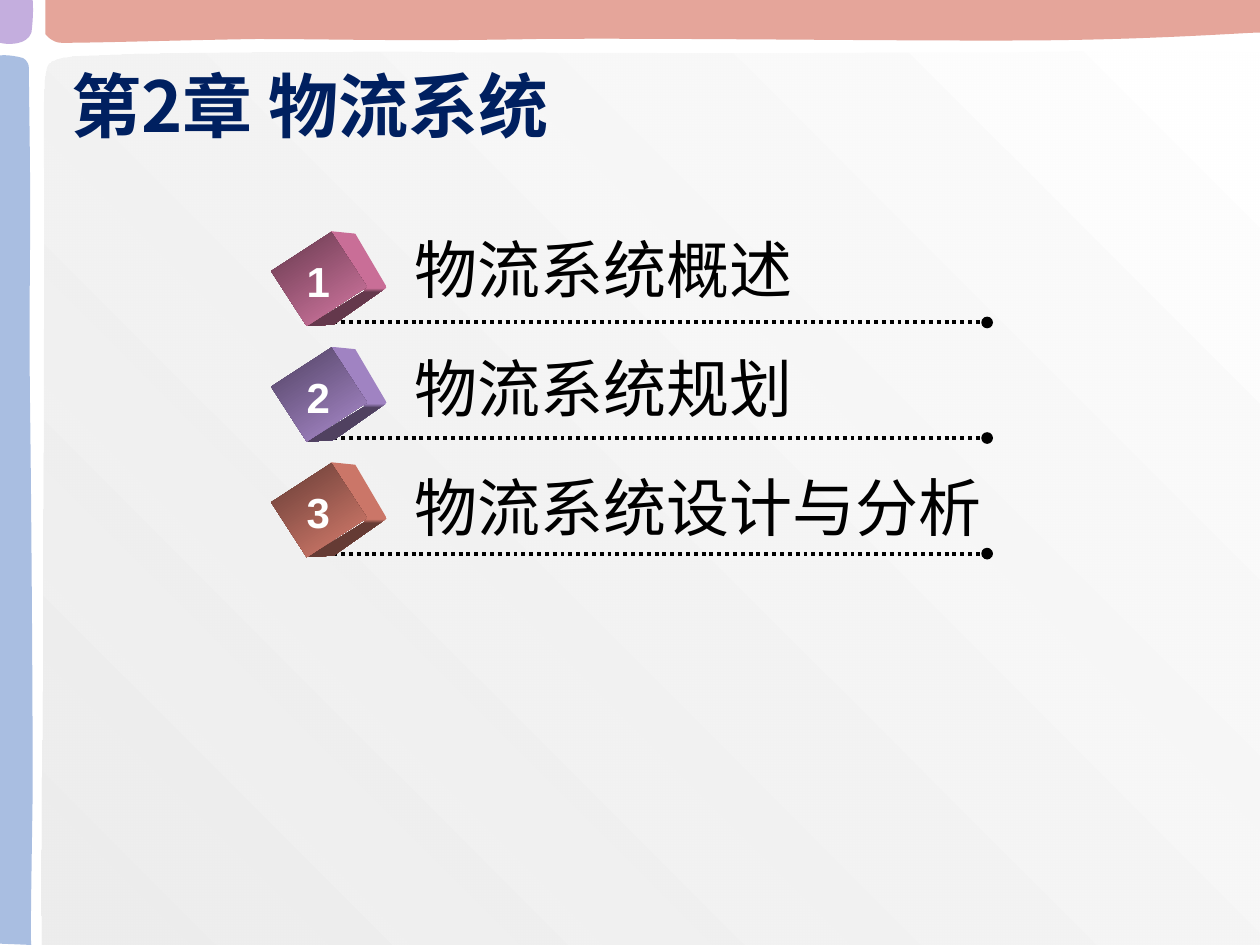
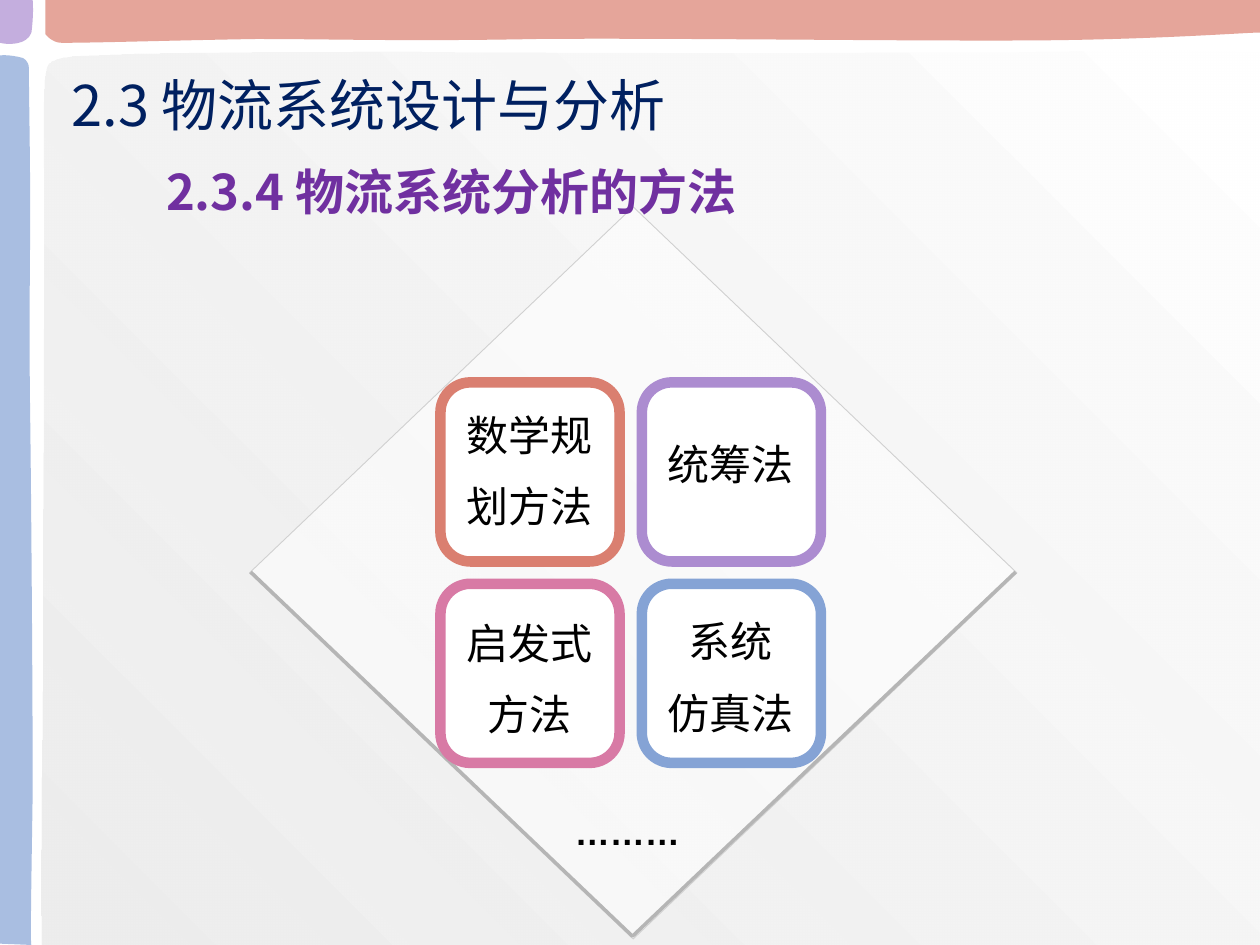
from lxml.etree import SubElement
from pptx import Presentation
from pptx.dml.color import RGBColor
from pptx.enum.dml import MSO_LINE
from pptx.enum.shapes import MSO_CONNECTOR, MSO_SHAPE
from pptx.enum.text import MSO_ANCHOR, MSO_AUTO_SIZE, PP_ALIGN
from pptx.oxml.ns import qn
from pptx.util import Cm, Pt

CORAL, PINK, PURPLE, BLUE = "DA7F70", "D87AA5", "AC8CD0", "85A3D5"
NAVY, VIOLET, BLACK, WHITE = "002060", "7030A0", "000000", "FFFFFF"
TITLE_FONT, BODY_FONT, LATIN_FONT = "Noto Sans CJK JP", "Noto Sans CJK SC", "Arial"


def paint(fill, *colors, alpha=100, angle=0):
    """Fill with one colour, or with a gradient of two; alpha applies to the first."""
    if len(colors) == 1:
        fill.solid()
        targets = [fill.fore_color]
    else:
        fill.gradient()
        fill.gradient_angle = angle
        targets = [stop.color for stop in fill.gradient_stops]
    for target, color in zip(targets, colors):
        target.rgb = RGBColor.from_string(color)
    if alpha < 100:
        first = next(fill._xPr.iter(qn("a:srgbClr")))
        SubElement(first, qn("a:alpha")).set("val", str(alpha * 1000))


def outline(page, points, down=0, close=True):
    """Draw points given in 1/100 inch; six numbers make a Bézier curve."""
    start_x, start_y = points[0]
    builder = page.shapes.build_freeform(start_x * 10, (start_y + down) * 10, scale=Cm(2.54) / 1000)
    builder.add_line_segments([(point[-2] * 10, (point[-1] + down) * 10) for point in points[1:]],
                              close=close)
    shape = builder.convert_to_shape()
    for line, point in zip(list(shape.element.iter(qn("a:lnTo"))), points[1:]):
        if len(point) == 6:
            path = line.getparent()
            curve = SubElement(path, qn("a:cubicBezTo"))
            for x, y in zip(point[::2], point[1::2]):
                handle = SubElement(curve, qn("a:pt"))
                handle.set("x", str(round(x * 10 - builder.shape_offset_x)))
                handle.set("y", str(round((y + down) * 10 - builder.shape_offset_y)))
            path.replace(line, curve)
    shape.shadow.inherit = False
    shape.line.fill.background()
    return shape


deck = Presentation()
deck.slide_width, deck.slide_height = Cm(25.4), Cm(19.05)
blank = deck.slide_layouts[6]
contents = deck.slides.add_slide(blank)
methods = deck.slides.add_slide(blank)

# Shared frame, moved to the master
panel = [(1000, 750), (1000, 42), (886, 38, 855, 42, 760, 42), (666, 42, 550, 43, 433, 42),
         (316, 41, 123, 41, 57, 45), (36, 48, 36, 49, 35, 73), (34, 96, 35, 110, 35, 182),
         (35, 256, 34, 412, 34, 506), (34, 601, 32, 662, 33, 750)]
top_band = [(1000, 0), (1000, 26), (1001, 25, 928, 31, 832, 32), (736, 33, 531, 30, 426, 31),
            (321, 33, 265, 31, 203, 31), (140, 32, 77, 34, 49, 34), (41, 34, 36, 27, 36, 27),
            (36, 27, 36, 14, 36, 0)]
left_band = [(0, 749), (25, 750), (24, 751, 25, 698, 26, 628), (26, 558, 25, 407, 24, 330),
             (23, 254, 24, 212, 24, 167), (24, 121, 23, 75, 23, 54), (23, 48, 18, 46, 18, 46),
             (7, 43, 0, 44, 0, 44)]
corner = [(0, 0), (26, 0), (27, 12, 25, 26, 25, 26), (23, 31, 19, 33, 15, 34), (7, 36, 0, 34, 0, 34)]
for points, colors in ((panel, ("E6E6E6", WHITE)), (top_band, (CORAL,)),
                       (left_band, (BLUE,)), (corner, (PURPLE,))):
    part = outline(contents, points)
    paint(part.fill, *colors, alpha=70, angle=45)
    deck.slide_master.element.cSld.spTree.append(part.element)

# Texts: page, left, top, width, height, lines, size, font, colour, bold, centred, wrapped
texts = [
    (contents, 1.19, 0.79, 18.7, 2.62, ["第2章 物流系统"], 40, TITLE_FONT, NAVY, True, False, True),
    (methods, 1.19, 0.79, 18.7, 2.62, ["2.3 物流系统设计与分析"], 32, TITLE_FONT, NAVY, False, False, True),
    (methods, 3.1, 3.13, 12.8, 1.45, ["2.3.4 物流系统分析的方法"], 28, BODY_FONT, VIOLET, True, False, True),
    (methods, 10.72, 16.21, 3.86, 1.09, ["………"], 20, LATIN_FONT, BLACK, True, True, True),
]

# Contents: one cube, dotted rule and heading per section
cube_sides = [(262.5, 183.5), (282, 185.5), (307, 228), (265, 257.5), (244, 259), (289.5, 231)]
sections = [("物流系统概述", 4.52, 8.2, PINK, "64384C", "C96E97"),
            ("物流系统规划", 6.93, 8.13, PURPLE, "504160", "A083C2"),
            ("物流系统设计与分析", 9.32, 11.94, CORAL, "653B34", "CB7668")]
for index, (heading, top, width, light, dark, middle) in enumerate(sections):
    drop = index * 2.33
    rule = contents.shapes.add_connector(MSO_CONNECTOR.STRAIGHT, Cm(6.56), Cm(6.5 + drop),
                                         Cm(19.9), Cm(6.5 + drop))
    paint(rule.line.fill, BLACK)
    rule.line.width = Pt(2.25)
    rule.line.dash_style = MSO_LINE.ROUND_DOT
    SubElement(rule.line._get_or_add_ln(), qn("a:tailEnd")).set("type", "oval")
    SubElement(rule.element.spPr, qn("a:effectLst"))
    sides = outline(contents, cube_sides, index * 91.7)
    paint(sides.fill, middle, dark, angle=270)
    for stop, position in zip(sides.fill.gradient_stops, (0.6, 0.64)):
        stop.position = position
    face = contents.shapes.add_shape(MSO_SHAPE.RECTANGLE, Cm(5.77), Cm(4.9 + drop), Cm(1.32), Cm(1.45))
    face.rotation = 57
    face.shadow.inherit = False
    face.line.fill.background()
    paint(face.fill, dark, light)
    texts.append((contents, 8.1, top, width, 1.79, [heading], 36, BODY_FONT, BLACK, False, False, False))
    texts.append((contents, 5.92, 5.03 + drop, 0.99, 1.27, [str(index + 1)], 24, LATIN_FONT,
                  WHITE, True, True, False))

# Methods: a diamond with a heavier lower edge behind four tiles
diamond = methods.shapes.add_shape(MSO_SHAPE.DIAMOND, Cm(5.03), Cm(4.17), Cm(15.47), Cm(14.76))
diamond.shadow.inherit = False
paint(diamond.fill, WHITE, alpha=55)
paint(diamond.line.fill, "D0D0D0")
diamond.line.width = Pt(0.5)
lower_edge = outline(methods, [(199, 454), (502, 743), (806, 454)], close=False)
lower_edge.fill.background()
paint(lower_edge.line.fill, "B5B5B5")
lower_edge.line.width = Pt(2)

tiles = [(0, 0, CORAL, ["数学规", "划方法"], 8.13), (0, 1, PINK, ["启发式", "方法"], 12.32),
         (1, 0, PURPLE, ["统筹法"], 8.71), (1, 1, BLUE, ["系统", "仿真法"], 12.29)]
for column, row, color, lines, top in tiles:
    tile = methods.shapes.add_shape(MSO_SHAPE.ROUNDED_RECTANGLE, Cm(8.88 + column * 4.06),
                                    Cm(7.71 + row * 4.06), Cm(3.61), Cm(3.61))
    tile.shadow.inherit = False
    paint(tile.fill, WHITE)
    paint(tile.line.fill, color)
    tile.line.width = Pt(6)
    texts.append((methods, 9.09 + column * 4.04, top, 3.18, 1.3 if len(lines) == 1 else 2.82,
                  lines, 24, BODY_FONT, BLACK, False, True, True))

for page, left, top, width, height, lines, size, font, color, bold, centred, wrapped in texts:
    box = page.shapes.add_textbox(Cm(left), Cm(top), Cm(width), Cm(height))
    frame = box.text_frame
    frame.text = "\n".join(lines)
    frame.word_wrap = wrapped
    if font == TITLE_FONT:
        frame.vertical_anchor = MSO_ANCHOR.MIDDLE
    else:
        frame.auto_size = MSO_AUTO_SIZE.SHAPE_TO_FIT_TEXT
    for para in frame.paragraphs:
        para.alignment = PP_ALIGN.CENTER if centred else PP_ALIGN.LEFT
        if centred and page is methods:
            para.space_before = Pt(size / 2)
        for span in para.runs:
            span.font.size = Pt(size)
            span.font.bold = bold
            span.font.name = font
            paint(span.font.fill, color)
            SubElement(span.font._rPr, qn("a:ea")).set("typeface", font)

deck.save("out.pptx")
